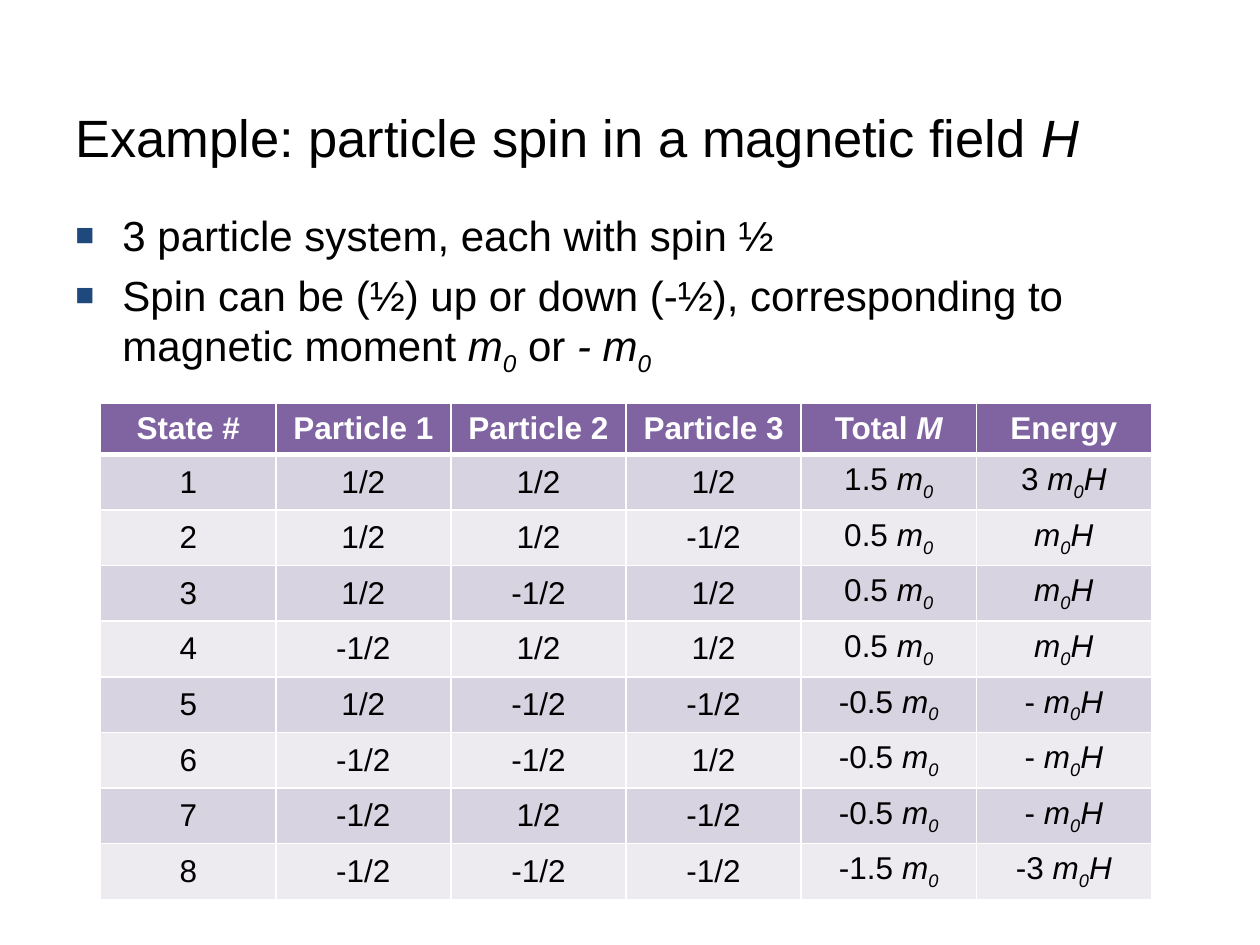
import pptx
import pptx.util
import pptx.dml.color
import pptx.enum.text
import pptx.oxml
import pptx.oxml.ns
from lxml import etree

Cm, Pt = pptx.util.Cm, pptx.util.Pt
RGB = pptx.dml.color.RGBColor
ALIGN = pptx.enum.text.PP_ALIGN
ANCHOR = pptx.enum.text.MSO_ANCHOR

BLACK = RGB(0x00, 0x00, 0x00)
WHITE = RGB(0xFF, 0xFF, 0xFF)
NAVY = RGB(0x1F, 0x49, 0x7D)
PURPLE = RGB(0x80, 0x64, 0xA2)
BANDS = [RGB(0xD8, 0xD3, 0xE0), RGB(0xED, 0xEA, 0xF0)]
FONT = "Arial"

# Content: rich text is a list of (text, style), "i" italic, "s" italic subscript
M0 = [("m", "i"), ("0", "s")]
M0H = M0 + [("H", "i")]
TITLE = [("Example: particle spin in a magnetic field ", ""), ("H", "i")]
POINTS = [
    [("3 particle system, each with spin ½", "")],
    [("Spin can be (½) up or down (-½), corresponding to magnetic moment ", ""),
     *M0, (" or ", ""), ("- m", "i"), ("0", "s")],
]
HEAD = [[("State #", "")], [("Particle 1", "")], [("Particle 2", "")],
        [("Particle 3", "")], [("Total ", ""), ("M", "i")], [("Energy", "")]]
# Three spins, factor of the total moment, factor of the energy
STATES = [
    ("1/2", "1/2", "1/2", "1.5 ", "3 "),
    ("1/2", "1/2", "-1/2", "0.5 ", ""),
    ("1/2", "-1/2", "1/2", "0.5 ", ""),
    ("-1/2", "1/2", "1/2", "0.5 ", ""),
    ("1/2", "-1/2", "-1/2", "-0.5 ", "- "),
    ("-1/2", "-1/2", "1/2", "-0.5 ", "- "),
    ("-1/2", "1/2", "-1/2", "-0.5 ", "- "),
    ("-1/2", "-1/2", "-1/2", "-1.5 ", "-3 "),
]


def write(para, parts, size, color=BLACK, bold=False):
    font = para.font
    font.name, font.size, font.bold = FONT, Pt(size), bold
    font.color.rgb = color
    for text, style in parts:
        if not text:
            continue
        run = para.add_run()
        run.text = text
        if style:
            run.font.italic = True
        if style == "s":
            run._r.get_or_add_rPr().set("baseline", "-25000")


def add(parent, tag, **attrs):
    node = etree.SubElement(parent, pptx.oxml.ns.qn("a:" + tag))
    for key, value in attrs.items():
        node.set(key, str(value))
    return node


def bullet(para):
    props = para._p.get_or_add_pPr()
    props.set("marL", str(Cm(0.95)))
    props.set("indent", str(-Cm(0.95)))
    add(add(props, "buClr"), "srgbClr", val=NAVY)
    add(props, "buSzPct", val=75000)
    add(props, "buFont", typeface=FONT)
    add(props, "buChar", char="■")


def border(cell, top, bottom):
    props = cell._tc.get_or_add_tcPr()
    for side, width in (("L", 1), ("R", 1), ("T", top), ("B", bottom)):
        line = add(props, "ln" + side, w=Pt(width))
        add(add(line, "solidFill"), "srgbClr", val=WHITE)


def box(slide, top, height):
    frame = slide.shapes.add_textbox(Cm(1.27), Cm(top), Cm(22.86), Cm(height)).text_frame
    frame.word_wrap = True
    return frame


deck = pptx.Presentation()
deck.slide_width, deck.slide_height = Cm(25.4), Cm(19.05)
slide = deck.slides.add_slide(deck.slide_layouts[6])

# Title
frame = box(slide, 1.27, 2.97)
frame.vertical_anchor = ANCHOR.MIDDLE
write(frame.paragraphs[0], TITLE, 30)

# Bullet points
frame = box(slide, 4.1, 11.2)
for i, parts in enumerate(POINTS):
    para = frame.add_paragraph() if i else frame.paragraphs[0]
    bullet(para)
    if i:
        para.space_before = Pt(5.5)
    write(para, parts, 24)

# Table of states
rows = [HEAD]
for n, (*spins, total, energy) in enumerate(STATES, 1):
    rows.append([[(text, "")] for text in (str(n), *spins)]
                + [[(total, "")] + M0, [(energy, "")] + M0H])
wide, high = 3.53, 1.03
table = slide.shapes.add_table(len(rows), len(HEAD), Cm(2.03), Cm(8.13),
                               Cm(wide * len(HEAD)), Cm(high * len(rows))).table
for col in table.columns:
    col.width = Cm(wide)
for r, row in enumerate(rows):
    table.rows[r].height = Cm(high)
    top = r == 0
    for c, parts in enumerate(row):
        cell = table.cell(r, c)
        border(cell, 3 if r == 1 else 1, 3 if top else 1)
        cell.fill.solid()
        cell.fill.fore_color.rgb = PURPLE if top else BANDS[(r - 1) % 2]
        cell.vertical_anchor = ANCHOR.MIDDLE
        para = cell.text_frame.paragraphs[0]
        para.alignment = ALIGN.CENTER
        write(para, parts, 18, WHITE if top else BLACK, top)

deck.save("out.pptx")
